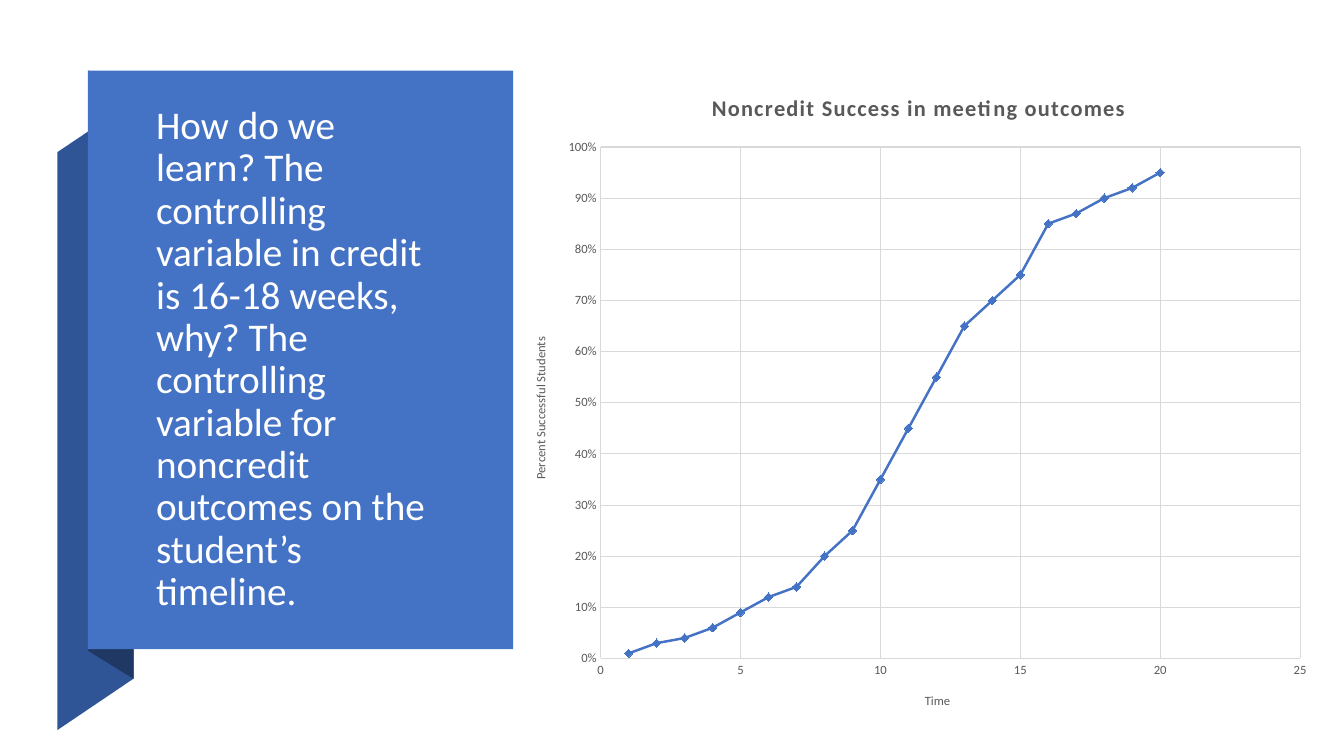
from pptx import Presentation
from pptx import util as u
from pptx.chart.data import XyChartData
from pptx.dml.color import RGBColor
from pptx.enum import chart as ch, shapes, text
from pptx.oxml import parse_xml
from pptx.oxml.ns import nsdecls, qn

# Content
body = ("How do we learn? The controlling variable in credit is 16-18 weeks, "
        "why? The controlling variable for noncredit outcomes on the "
        "student’s timeline.")
title = "Noncredit Success in meeting outcomes"
share = [0.01, 0.03, 0.04, 0.06, 0.09, 0.12, 0.14, 0.2, 0.25, 0.35,
         0.45, 0.55, 0.65, 0.7, 0.75, 0.85, 0.87, 0.9, 0.92, 0.95]
hues = {"panel": "4472C4", "fold": "2F5597", "dark": "203864",
        "grid": "D9D9D9", "gray": "595959", "white": "FFFFFF"}
font = "Calibri"

# Places in points
folds = [
    ("fold", [(41, 521.5), (95.5, 484.7), (95.5, 72), (41, 108.7)]),
    ("dark", [(63, 465), (95.5, 485), (95.5, 71.3), (63, 50.4)]),
]
panel = (62.7, 50.4, 303.8, 413.3)
words = (104.4, 50.4, 216.7, 413.3)
graph = (366.5, 50.4, 579.6, 470.9)
plot = {"x": 0.108, "y": 0.116, "w": 0.862, "h": 0.776}


def hue(name):
    return RGBColor.from_string(hues[name])


def paint(shape, name):
    shape.shadow.inherit = False
    shape.fill.solid()
    shape.fill.fore_color.rgb = hue(name)
    shape.line.fill.background()


def style(f, size, name, bold=False):
    f.name, f.size, f.bold = font, u.Pt(size), bold
    f.color.rgb = hue(name)


def label(owner, words, size, bold=False):
    para = owner.text_frame.paragraphs[0]
    para.text = words
    style(para.runs[0].font, size, "gray", bold)


def rule(line, name, width):
    line.color.rgb = hue(name)
    line.width = u.Pt(width)


deck = Presentation()
deck.slide_width, deck.slide_height = u.Pt(960), u.Pt(540)
slide = deck.slides.add_slide(deck.slide_layouts[6])

# Folded ribbon behind the panel
for name, pts in folds:
    pts = [(u.Pt(x), u.Pt(y)) for x, y in pts]
    form = slide.shapes.build_freeform(*pts[0])
    form.add_line_segments(pts[1:], close=True)
    paint(form.convert_to_shape(), name)

# Panel and its words
paint(slide.shapes.add_shape(shapes.MSO_SHAPE.RECTANGLE, *map(u.Pt, panel)),
      "panel")
frame = slide.shapes.add_textbox(*map(u.Pt, words)).text_frame
frame.word_wrap = True
frame.vertical_anchor = text.MSO_ANCHOR.MIDDLE
para = frame.paragraphs[0]
para.text = body
para.line_spacing = 0.9
style(para.runs[0].font, 28, "white")

# Chart
data = XyChartData()
points = data.add_series("Series 1")
for week, part in enumerate(share, 1):
    points.add_data_point(week, part)
chart = slide.shapes.add_chart(ch.XL_CHART_TYPE.XY_SCATTER_LINES,
                               *map(u.Pt, graph), data).chart
chart.has_legend = False
style(chart.font, 10, "gray")
chart.has_title = True
label(chart.chart_title, title, 16, True)
for props in chart.element.iter(qn("a:rPr")):
    props.set("spc", "100")

# Axes
axes = [(chart.category_axis, "Time", 25, 5, "General"),
        (chart.value_axis, "Percent Successful Students", 1, 0.1, "0%")]
for axis, name, top, step, form in axes:
    axis.minimum_scale, axis.maximum_scale, axis.major_unit = 0, top, step
    axis.major_tick_mark = axis.minor_tick_mark = ch.XL_TICK_MARK.NONE
    axis.has_major_gridlines = True
    rule(axis.major_gridlines.format.line, "grid", 0.75)
    rule(axis.format.line, "grid", 0.75)
    axis.tick_labels.number_format = form
    axis.tick_labels.number_format_is_linked = False
    style(axis.tick_labels.font, 9, "gray")
    axis.has_title = True
    label(axis.axis_title, name, 9)

# Line and markers
curve = chart.plots[0].series[0]
curve.smooth = False
rule(curve.format.line, "panel", 1.75)
mark = curve.marker
mark.style, mark.size = ch.XL_MARKER_STYLE.DIAMOND, 6
mark.format.fill.solid()
mark.format.fill.fore_color.rgb = hue("panel")
rule(mark.format.line, "panel", 0.75)

# Plot area position
area = chart.element.find(".//" + qn("c:plotArea"))
for old in area.findall(qn("c:layout")):
    area.remove(old)
modes = "".join(f'<c:{k}Mode val="edge"/>' for k in "xy")
sizes = "".join(f'<c:{k} val="{v}"/>' for k, v in plot.items())
area.insert(0, parse_xml(
    f'<c:layout {nsdecls("c")}><c:manualLayout><c:layoutTarget val="inner"/>'
    f'{modes}{sizes}</c:manualLayout></c:layout>'))

deck.save("out.pptx")
